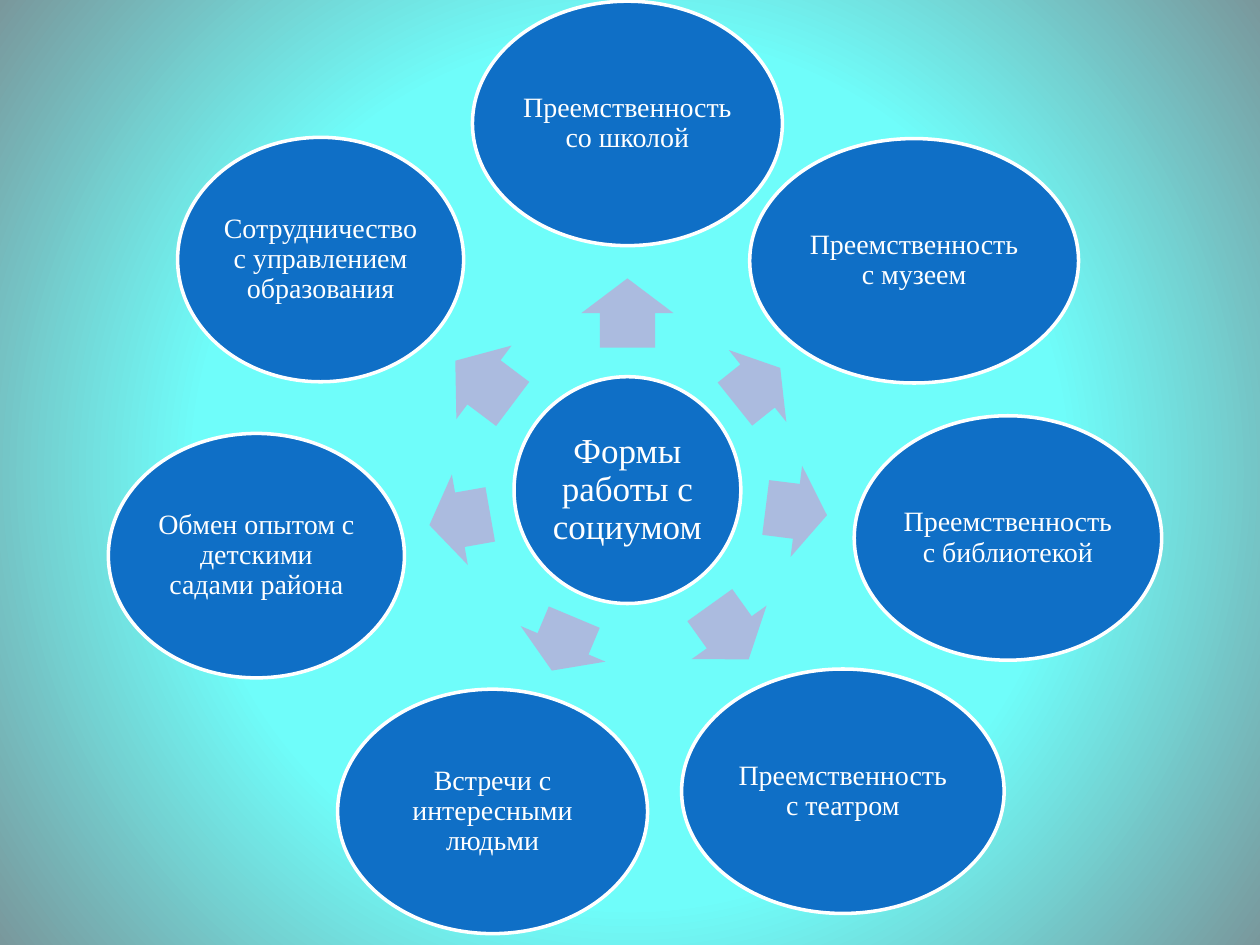
from math import atan2, cos, degrees, sin

from lxml.etree import SubElement
from pptx import Presentation
from pptx.dml.color import RGBColor
from pptx.enum.shapes import MSO_SHAPE
from pptx.enum.text import MSO_ANCHOR, PP_ALIGN
from pptx.oxml.ns import qn
from pptx.util import Inches, Pt

COLUMNS = 100
SLIDE_SIZE = (Inches(10), Inches(7.5))
CELL = SLIDE_SIZE[0] / COLUMNS
HUB = (49.8, 38.9)
HUB_SIZE = 18
PETAL_HEIGHT = 19.4
ARROW_HEIGHT = 7.3
ARROW_REACH = 0.92
PETALS = [
    ("Преемственность со школой", (49.8, 9.8), 24.6, 5.5),
    ("Преемственность с музеем", (72.55, 20.7), 26.1, 4.6),
    ("Преемственность с библиотекой", (80, 42.7), 24.4, 4.9),
    ("Преемственность с театром", (66.9, 62.8), 25.6, 5.3),
    ("Встречи с интересными людьми", (39.1, 64.4), 24.6, 4.6),
    ("Обмен опытом с детскими садами района", (20.35, 44.1), 23.5, 4.9),
    ("Сотрудничество с управлением образования", (25.45, 20.6), 22.7, 5.7),
]


def color(value):
    """Turn a hex string into a colour."""
    return RGBColor.from_string(value)


def apply_format(target, values):
    """Set each attribute of the target from a dict."""
    for name, value in values.items():
        setattr(target, name, value)


def paint_background(slide):
    """Fill the slide with a round gradient, bright in the middle."""
    fill = slide.background.fill
    fill.gradient()
    for stop, (position, value) in zip(fill.gradient_stops, [(0.55, "6FFDFA"), (1, "79989C")]):
        stop.position = position
        stop.color.rgb = color(value)
    gradient = next(slide.element.iter(qn("a:gradFill")))
    gradient.remove(gradient.find(qn("a:lin")))
    circle = SubElement(gradient, qn("a:path"), {"path": "circle"})
    SubElement(circle, qn("a:fillToRect"), dict.fromkeys("ltrb", "50000"))


def add_centred(slide, kind, centre, width, height, fill):
    """Add a flat preset shape around a centre given in grid cells."""
    left, top = centre[0] - width / 2, centre[1] - height / 2
    box = [round(length * CELL) for length in (left, top, width, height)]
    shape = slide.shapes.add_shape(kind, *box)
    shape.shadow.inherit = False
    shape.fill.solid()
    shape.fill.fore_color.rgb = color(fill)
    return shape


def add_bubble(slide, text, centre, width, height, size):
    """Add a white-edged ellipse with centred text."""
    shape = add_centred(slide, MSO_SHAPE.OVAL, centre, width, height, "0F6FC6")
    shape.line.color.rgb = color("FFFFFF")
    shape.line.width = Pt(2)
    frame = shape.text_frame
    margins = dict.fromkeys(
        ("margin_left", "margin_top", "margin_right", "margin_bottom"), Inches(0.03))
    apply_format(frame, {"word_wrap": True, "vertical_anchor": MSO_ANCHOR.MIDDLE, **margins})
    paragraph = frame.paragraphs[0]
    apply_format(paragraph, {"text": text, "alignment": PP_ALIGN.CENTER, "line_spacing": 0.9})
    font = paragraph.runs[0].font
    apply_format(font, {"name": "Times New Roman", "size": Pt(size)})
    font.color.rgb = color("FFFFFF")


def add_arrow(slide, target, length):
    """Add an arrow that points from the hub towards the target."""
    angle = atan2(target[1] - HUB[1], target[0] - HUB[0])
    distance = HUB_SIZE / 2 + ARROW_REACH * length
    centre = (HUB[0] + distance * cos(angle), HUB[1] + distance * sin(angle))
    arrow = add_centred(slide, MSO_SHAPE.RIGHT_ARROW, centre, length, ARROW_HEIGHT, "ABBBDF")
    arrow.line.fill.background()
    arrow.adjustments[0] = 0.6
    arrow.adjustments[1] = 0.5
    arrow.rotation = degrees(angle) % 360


def add_radial_diagram(slide):
    """Place the hub, then an arrow and a bubble for each petal."""
    add_bubble(slide, "Формы работы с социумом", HUB, HUB_SIZE, HUB_SIZE, 20)
    for text, centre, width, arrow_length in PETALS:
        add_arrow(slide, centre, arrow_length)
        add_bubble(slide, text, centre, width, PETAL_HEIGHT, 16)


def main():
    """Build and save the presentation."""
    presentation = Presentation()
    presentation.slide_width, presentation.slide_height = SLIDE_SIZE
    slide = presentation.slides.add_slide(presentation.slide_layouts[6])
    paint_background(slide)
    add_radial_diagram(slide)
    presentation.save("out.pptx")


if __name__ == "__main__":
    main()
